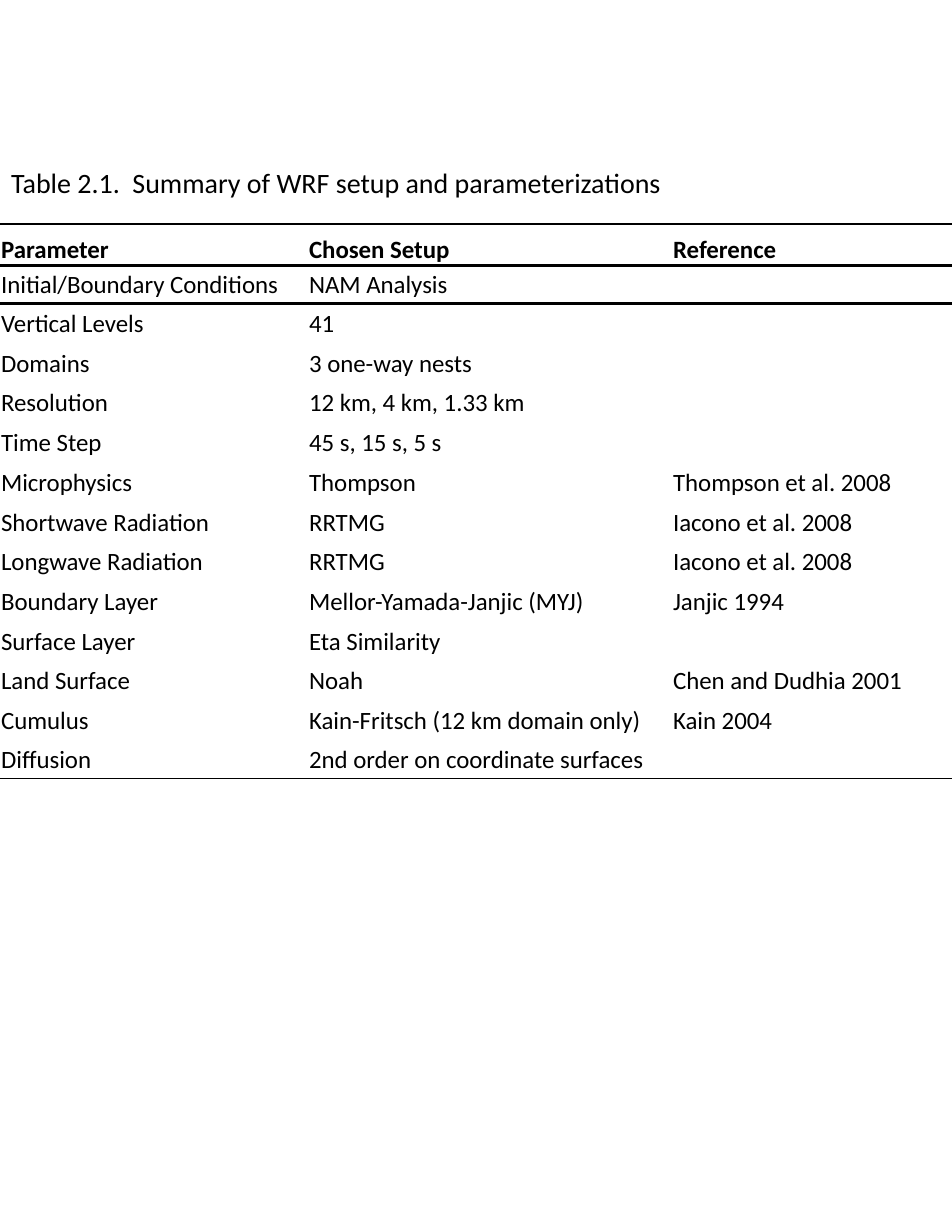
from dataclasses import dataclass

from lxml.etree import SubElement
from pptx import Presentation
from pptx.dml.color import RGBColor
from pptx.enum.text import MSO_ANCHOR
from pptx.oxml.ns import qn
from pptx.util import Inches, Pt

WIDTH, HEIGHT = 8.5, 11
BLACK = "000000"
FONT = "Calibri"
NO_STYLE = "{2D5ABB26-0587-4C30-8999-92F81FD0307C}"
COLUMN_WIDTHS = (2.75, 3.25, 2.5)
TABLE_TOP = 2
HEADER_HEIGHT, EDGE_HEIGHT, ROW_HEIGHT = 0.37, 0.34, 0.355
THIN, THICK = 1, 2.25


@dataclass(frozen=True)
class Setting:
    parameter: str
    setup: str
    reference: str = ""

    def texts(self) -> tuple[str, str, str]:
        return self.parameter, self.setup, self.reference


HEADER = Setting("Parameter", "Chosen Setup", "Reference")
SETTINGS = (
    Setting("Initial/Boundary Conditions", "NAM Analysis"),
    Setting("Vertical Levels", "41"),
    Setting("Domains", "3 one-way nests"),
    Setting("Resolution", "12 km, 4 km, 1.33 km"),
    Setting("Time Step", "45 s, 15 s, 5 s"),
    Setting("Microphysics", "Thompson", "Thompson et al. 2008"),
    Setting("Shortwave Radiation", "RRTMG", "Iacono et al. 2008"),
    Setting("Longwave Radiation", "RRTMG", "Iacono et al. 2008"),
    Setting("Boundary Layer", "Mellor-Yamada-Janjic (MYJ)", "Janjic 1994"),
    Setting("Surface Layer", "Eta Similarity"),
    Setting("Land Surface", "Noah", "Chen and Dudhia 2001"),
    Setting("Cumulus", "Kain-Fritsch (12 km domain only)", "Kain 2004"),
    Setting("Diffusion", "2nd order on coordinate surfaces"),
)
ROWS = (HEADER, *SETTINGS)
LAST = len(ROWS) - 1
RULES = {0: THIN, 1: THICK, 2: THICK, len(ROWS): THIN}


def color(value: str) -> RGBColor:
    return RGBColor.from_string(value)


def add_run(paragraph, text: str, size: float, bold: bool = False) -> None:
    run = paragraph.add_run()
    run.text = text
    run.font.name = FONT
    run.font.size = Pt(size)
    run.font.bold = bold
    run.font.color.rgb = color(BLACK)


def add_border(cell, side: str, width: float | None) -> None:
    properties = cell._tc.get_or_add_tcPr()
    line = SubElement(properties, qn(f"a:{side}"))
    if width is None:
        SubElement(line, qn("a:noFill"))
        return
    line.set("w", str(Pt(width)))
    fill = SubElement(line, qn("a:solidFill"))
    SubElement(fill, qn("a:srgbClr")).set("val", BLACK)


def row_height(index: int) -> float:
    if index == 0:
        return HEADER_HEIGHT
    return EDGE_HEIGHT if index in (1, LAST) else ROW_HEIGHT


def fill_cell(cell, text: str, row: int) -> None:
    cell.margin_left = cell.margin_right = cell.margin_top = Inches(0.01)
    cell.margin_bottom = 0
    cell.vertical_anchor = MSO_ANCHOR.BOTTOM if row == 0 else MSO_ANCHOR.MIDDLE
    borders = {"lnL": None, "lnR": None, "lnT": RULES.get(row), "lnB": RULES.get(row + 1)}
    for side, width in borders.items():
        add_border(cell, side, width)
    cell.fill.background()
    if text:
        add_run(cell.text_frame.paragraphs[0], text, 16, bold=row == 0)


def add_caption(slide) -> None:
    shape = slide.shapes.add_textbox(Inches(-0.01), Inches(1.42), Inches(WIDTH + 0.02), Inches(0.42))
    frame = shape.text_frame
    frame.word_wrap = True
    frame.margin_left = frame.margin_right = Inches(0.11)
    frame.margin_top = frame.margin_bottom = Inches(0.06)
    add_run(frame.paragraphs[0], "Table 2.1.  Summary of WRF setup and parameterizations", 18)


def add_settings_table(slide) -> None:
    heights = [row_height(index) for index in range(len(ROWS))]
    shape = slide.shapes.add_table(
        len(ROWS), len(COLUMN_WIDTHS), 0, Inches(TABLE_TOP), Inches(WIDTH), Inches(sum(heights))
    )
    table = shape.table
    table.first_row = table.horz_banding = False
    for style in shape._element.iter(qn("a:tableStyleId")):
        style.text = NO_STYLE
    for column, width in zip(table.columns, COLUMN_WIDTHS):
        column.width = Inches(width)
    for index, (row, height, setting) in enumerate(zip(table.rows, heights, ROWS)):
        row.height = Inches(height)
        for cell, text in zip(row.cells, setting.texts()):
            fill_cell(cell, text, index)


def main() -> None:
    presentation = Presentation()
    presentation.slide_width = Inches(WIDTH)
    presentation.slide_height = Inches(HEIGHT)
    slide = presentation.slides.add_slide(presentation.slide_layouts[6])
    add_caption(slide)
    add_settings_table(slide)
    presentation.save("out.pptx")


if __name__ == "__main__":
    main()
